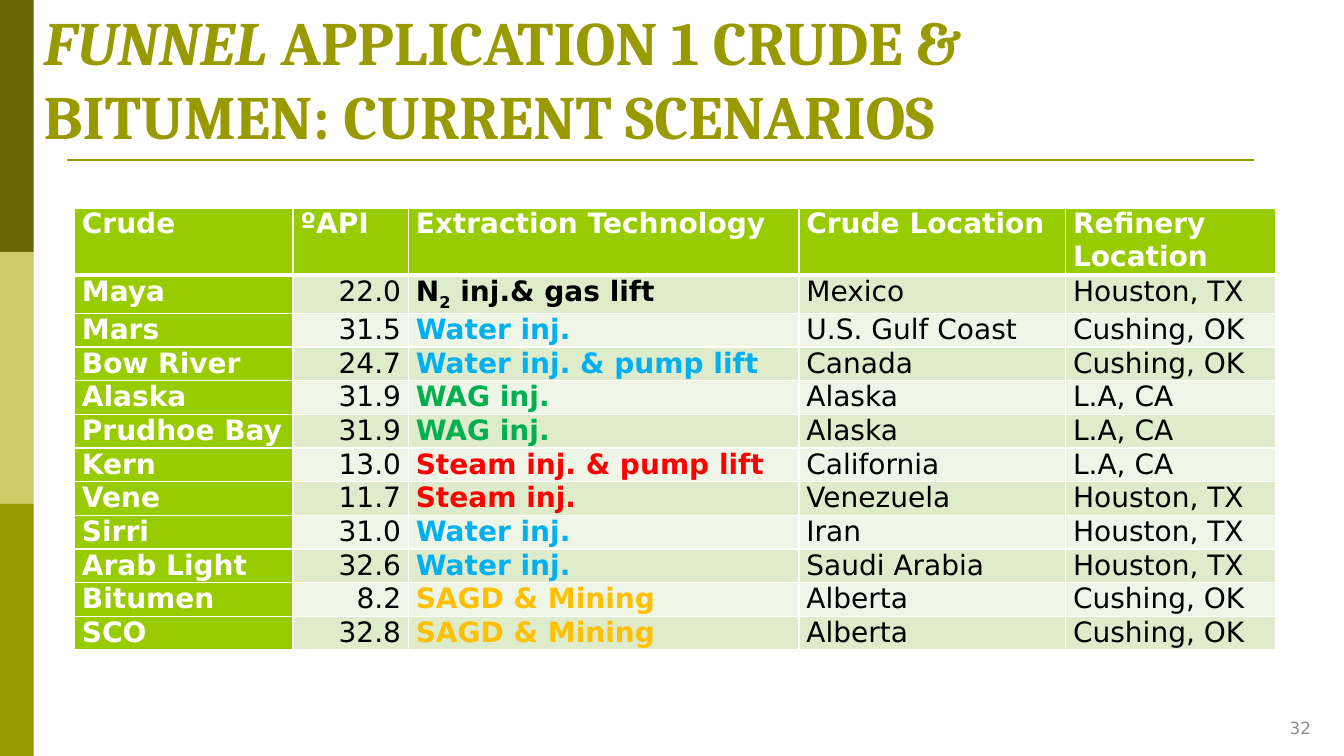
from lxml.etree import SubElement
from pptx import Presentation
from pptx.dml.color import RGBColor
from pptx.enum.shapes import MSO_CONNECTOR, MSO_SHAPE
from pptx.enum.text import MSO_ANCHOR, MSO_AUTO_SIZE, PP_ALIGN
from pptx.oxml.ns import qn
from pptx.util import Emu, Pt

SCALE = 9525  # EMU in one px, 96 px to the inch
WHITE = RGBColor(0xFF, 0xFF, 0xFF)
BLACK = RGBColor(0, 0, 0)
GREY = RGBColor(0x8C, 0x8C, 0x8C)
DARK = RGBColor(0x66, 0x66, 0x00)
PALE = RGBColor(0xCC, 0xCC, 0x66)
OLIVE = RGBColor(0x99, 0x99, 0x00)
LIME = RGBColor(0x99, 0xCC, 0x00)
BANDS = RGBColor(0xDE, 0xEC, 0xCC), RGBColor(0xEF, 0xF6, 0xE7)
BLUE = RGBColor(0x00, 0xB0, 0xF0)
GREEN = RGBColor(0x00, 0xB0, 0x50)
RED = RGBColor(0xFF, 0x00, 0x00)
AMBER = RGBColor(0xFF, 0xC0, 0x00)

SERIF, SANS = "Cambria", "DejaVu Sans"
TECH, API = 2, 1  # column numbers
WIDTHS = [208, 110, 372, 254, 200]
HEADS = ["Crude", "ºAPI", "Extraction Technology", "Crude Location",
         "Refinery Location"]
CRUDES = [
    ("Maya", "22.0", "N2 inj.& gas lift", "Mexico", "Houston, TX"),
    ("Mars", "31.5", "Water inj.", "U.S. Gulf Coast", "Cushing, OK"),
    ("Bow River", "24.7", "Water inj. & pump lift", "Canada", "Cushing, OK"),
    ("Alaska", "31.9", "WAG inj.", "Alaska", "L.A, CA"),
    ("Prudhoe Bay", "31.9", "WAG inj.", "Alaska", "L.A, CA"),
    ("Kern", "13.0", "Steam inj. & pump lift", "California", "L.A, CA"),
    ("Vene", "11.7", "Steam inj.", "Venezuela", "Houston, TX"),
    ("Sirri", "31.0", "Water inj.", "Iran", "Houston, TX"),
    ("Arab Light", "32.6", "Water inj.", "Saudi Arabia", "Houston, TX"),
    ("Bitumen", "8.2", "SAGD & Mining", "Alberta", "Cushing, OK"),
    ("SCO", "32.8", "SAGD & Mining", "Alberta", "Cushing, OK"),
]
HUES = {"N2": BLACK, "Water": BLUE, "WAG": GREEN, "Steam": RED, "SAGD": AMBER}


def px(*sizes):
    return [Emu(size * SCALE) for size in sizes]


def add_run(para, text, size, color, face=SANS, bold=False, slant=False):
    run = para.add_run()
    run.text = text
    font = run.font
    font.name, font.size, font.bold, font.italic = face, Pt(size), bold, slant
    font.color.rgb = color
    return run


def add_bar(slide, top, color):
    bar = slide.shapes.add_shape(MSO_SHAPE.RECTANGLE, *px(0, top, 32, 240))
    bar.shadow.inherit = False
    bar.fill.solid()
    bar.fill.fore_color.rgb = color
    bar.line.fill.background()


def add_rule(slide):
    rule = slide.shapes.add_connector(MSO_CONNECTOR.STRAIGHT,
                                      *px(64, 152, 1194, 152))
    rule.line.color.rgb = OLIVE
    rule.line.width = Pt(1.5)
    SubElement(rule._element.spPr, qn("a:effectLst"))


def set_title(slide):
    title = slide.shapes.title
    title.left, title.top, title.width, title.height = px(32, 29, 1120, 120)
    frame = title.text_frame
    frame.auto_size = MSO_AUTO_SIZE.NONE
    frame.word_wrap = True
    frame.vertical_anchor = MSO_ANCHOR.BOTTOM
    para = frame.paragraphs[0]
    para.alignment = PP_ALIGN.LEFT
    add_run(para, "FUNNEL ", 44, OLIVE, SERIF, True, True)
    add_run(para, "APPLICATION 1 CRUDE & BITUMEN: CURRENT SCENARIOS",
            44, OLIVE, SERIF, True)


def add_number(slide, text):
    frame = slide.shapes.add_textbox(*px(1173, 674, 85, 38)).text_frame
    frame.word_wrap = True
    frame.vertical_anchor = MSO_ANCHOR.MIDDLE
    para = frame.paragraphs[0]
    para.alignment = PP_ALIGN.RIGHT
    add_run(para, text, 12, GREY)


def set_edges(cell, row):
    props = cell._tc.get_or_add_tcPr()
    # The rule under the header row is thicker
    thick = {"T": row == 1, "B": row == 0}
    for side in "LRTB":
        width = Pt(3 if thick.get(side) else 1)
        line = SubElement(props, qn(f"a:ln{side}"), w=str(width))
        fill = SubElement(line, qn("a:solidFill"))
        SubElement(fill, qn("a:srgbClr"), val=str(WHITE))


def fill_cell(cell, text, row, col):
    label = row == 0 or col == 0
    set_edges(cell, row)
    cell.fill.solid()
    cell.fill.fore_color.rgb = LIME if label else BANDS[(row - 1) % 2]
    cell.margin_left, cell.margin_right = px(7, 7)
    cell.margin_top = cell.margin_bottom = 0
    para = cell.text_frame.paragraphs[0]
    if col == API and not label:
        para.alignment = PP_ALIGN.RIGHT
    if label:
        color = WHITE
    else:
        color = HUES[text.split()[0]] if col == TECH else BLACK
    bold = label or col == TECH
    if text.startswith("N2"):
        add_run(para, "N", 20, color, bold=bold)
        low = add_run(para, "2", 20, color, bold=bold)
        low._r.get_or_add_rPr().set("baseline", "-25000")
        text = text[2:]
    add_run(para, text, 20, color, bold=bold)


def add_grid(slide):
    rows = [HEADS, *CRUDES]
    high = [62, 35] + [31] * (len(rows) - 2)
    frame = slide.shapes.add_table(len(rows), len(HEADS),
                                   *px(71, 198, sum(WIDTHS), sum(high)))
    table = frame.table
    for column, width in zip(table.columns, px(*WIDTHS)):
        column.width = width
    for line, height in zip(table.rows, px(*high)):
        line.height = height
    for row, texts in enumerate(rows):
        for col, text in enumerate(texts):
            fill_cell(table.cell(row, col), text, row, col)


def main():
    deck = Presentation()
    deck.slide_width, deck.slide_height = px(1280, 720)
    slide = deck.slides.add_slide(deck.slide_layouts[5])
    # Side bars and rule
    for step, color in enumerate((DARK, PALE, OLIVE)):
        add_bar(slide, step * 240, color)
    add_rule(slide)
    # Title, page number and table
    set_title(slide)
    add_number(slide, "32")
    add_grid(slide)
    deck.save("out.pptx")


if __name__ == "__main__":
    main()
